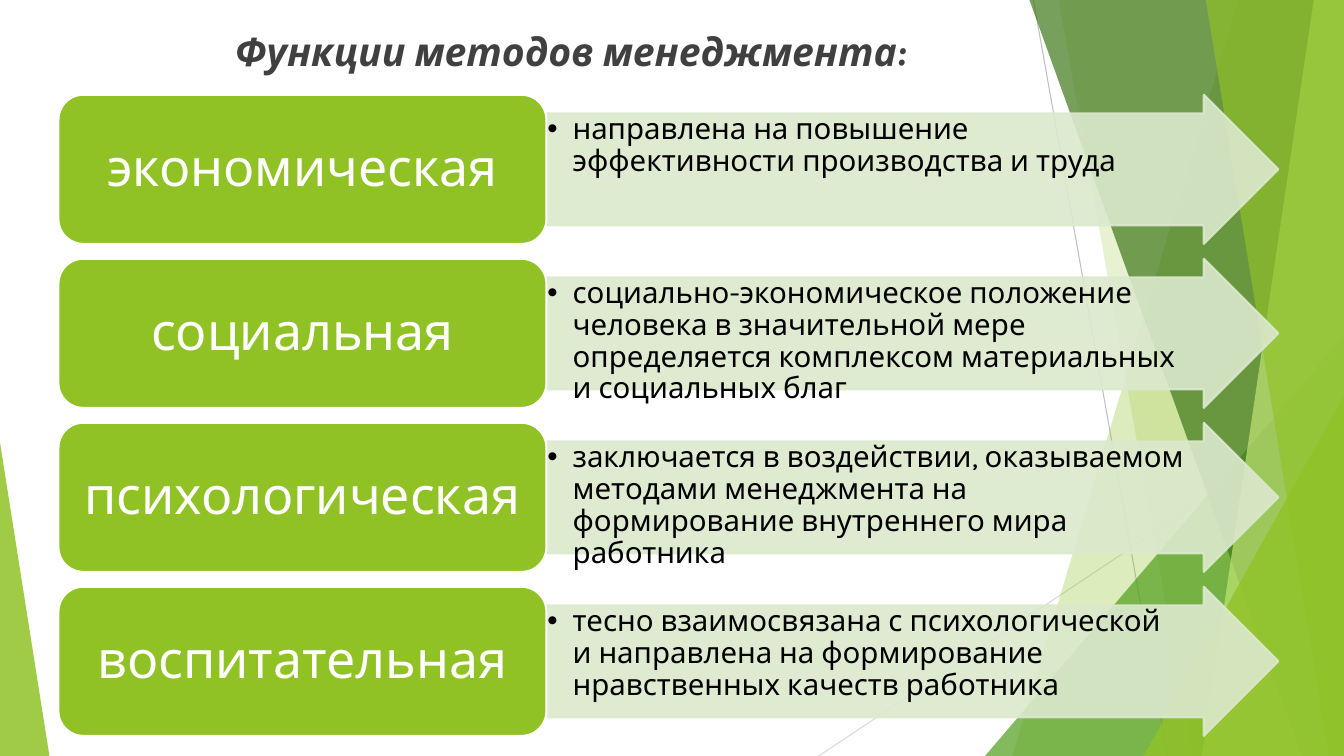
from lxml import etree
from pptx import Presentation
from pptx.dml.color import RGBColor
from pptx.enum.shapes import MSO_CONNECTOR, MSO_SHAPE
from pptx.enum.text import MSO_ANCHOR, PP_ALIGN
from pptx.oxml.ns import qn
from pptx.util import Inches, Pt

STRAIGHT = MSO_CONNECTOR.STRAIGHT
TRIANGLE = MSO_SHAPE.ISOSCELES_TRIANGLE
ARROW, ROUNDED = MSO_SHAPE.RIGHT_ARROW, MSO_SHAPE.ROUNDED_RECTANGLE
TOP, MIDDLE = MSO_ANCHOR.TOP, MSO_ANCHOR.MIDDLE
LEFT, CENTER = PP_ALIGN.LEFT, PP_ALIGN.CENTER

TITLE = "Функции методов менеджмента:"
FUNCTIONS = [
    ("экономическая", "направлена на повышение эффективности производства и труда"),
    ("социальная", "социально-экономическое положение человека в значительной мере "
                   "определяется комплексом материальных и социальных благ"),
    ("психологическая", "заключается в воздействии, оказываемом методами менеджмента "
                        "на формирование внутреннего мира работника"),
    ("воспитательная", "тесно взаимосвязана с психологической и направлена "
                       "на формирование нравственных качеств работника"),
]

THEME = {
    "font": "Karla", "title_size": 28, "label_size": 37, "detail_size": 21,
    "title": "404040", "label": "FFFFFF", "detail": "000000",
    "green": "90C226", "leaf": "54A021", "forest": "3F7819", "lime": "C0E474",
    "arrow": "DBE9CD", "outline": "FFFFFF", "ray": "BFBFBF", "pale_ray": "D9D9D9",
}

WIDTH, HEIGHT = 13.33, 7.5
RAYS = [((10.25, 0), (11.58, HEIGHT), "ray"), ((WIDTH, 4.03), (8.12, HEIGHT), "pale_ray")]
# Bands reach the right edge: (top x, bottom x, colour, opacity %)
# Triangles stand on the bottom edge: (left, top, width, apex, colour, opacity %)
BACKDROP = [
    ("band", (12.28, 10.04, "green", 30)),
    ("band", (10.5, 11.83, "green", 20)),
    ("triangle", (9.77, 3.33, 3.56, 1, "leaf", 72)),
    ("band", (10.21, 12.91, "forest", 70)),
    ("band", (13.03, 11.92, "lime", 70)),
    ("band", (11.96, 13.18, "green", 65)),
    ("triangle", (11.34, 3.93, 1.99, 1, "green", 80)),
    ("triangle", (0, 4.39, 0.49, 0, "green", 85)),
]

ROW_TOP, ROW_HEIGHT, ROW_STEP = 0.94, 1.48, 1.627
LABEL_LEFT, LABEL_WIDTH, ARROW_WIDTH = 0.58, 4.84, 7.26


def color(name):
    return RGBColor.from_string(THEME[name])


def paint(fill_format, name, opacity=100):
    fill_format.solid()
    fill_format.fore_color.rgb = color(name)
    if opacity < 100:
        for value in fill_format._xPr.iter(qn("a:srgbClr")):
            etree.SubElement(value, qn("a:alpha"), val=str(opacity * 1000))


def style(shape, fill, opacity=100, line=None):
    shape.shadow.inherit = False
    if line:
        shape.line.width = Pt(1.5)
        paint(shape.line.fill, line, opacity)
    else:
        shape.line.fill.background()
    paint(shape.fill, fill, opacity)


def add_shape(page, kind, left, top, width, height):
    return page.shapes.add_shape(kind, *map(Inches, (left, top, width, height)))


def add_ray(page, start, end, name):
    ray = page.shapes.add_connector(STRAIGHT, *map(Inches, (*start, *end)))
    ray.line.width = Pt(0.75)
    ray.line.color.rgb = color(name)
    etree.SubElement(ray._element.spPr, qn("a:effectLst"))


def add_band(page, top_x, bottom_x, name, opacity):
    outline = page.shapes.build_freeform(Inches(top_x), 0)
    corners = [(WIDTH, 0), (WIDTH, HEIGHT), (bottom_x, HEIGHT)]
    outline.add_line_segments([(Inches(x), Inches(y)) for x, y in corners], close=True)
    style(outline.convert_to_shape(), name, opacity)


def add_triangle(page, left, top, width, apex, name, opacity):
    triangle = add_shape(page, TRIANGLE, left, top, width, HEIGHT - top)
    triangle.adjustments[0] = apex
    style(triangle, name, opacity)


def write(shape, text, role, align, anchor, insets):
    """Fill a shape with one paragraph; insets run left, top, right, bottom."""
    frame = shape.text_frame
    frame.word_wrap = True
    frame.vertical_anchor = anchor
    (frame.margin_left, frame.margin_top,
     frame.margin_right, frame.margin_bottom) = map(Inches, insets)
    para = frame.paragraphs[0]
    para.alignment = align
    span = para.add_run()
    span.text = text
    span.font.name = THEME["font"]
    span.font.size = Pt(THEME[role + "_size"])
    span.font.color.rgb = color(role)
    return para, span


def add_bullet(para, indent):
    properties = para._p.get_or_add_pPr()
    properties.set("marL", str(Inches(indent)))
    properties.set("indent", str(-Inches(indent)))
    etree.SubElement(properties, qn("a:buFont"), typeface="Arial")
    etree.SubElement(properties, qn("a:buChar"), char="•")


def add_function(page, top, label, detail):
    arrow = add_shape(page, ARROW, LABEL_LEFT + LABEL_WIDTH, top, ARROW_WIDTH, ROW_HEIGHT)
    arrow.adjustments[0], arrow.adjustments[1] = 0.75, 0.5
    style(arrow, "arrow", 90, line="arrow")
    para, _ = write(arrow, detail, "detail", LEFT, TOP, (0.01, 0.01, 0.37, 0.01))
    para.line_spacing = 0.9
    add_bullet(para, 0.25)

    box = add_shape(page, ROUNDED, LABEL_LEFT, top, LABEL_WIDTH, ROW_HEIGHT)
    style(box, "green", line="outline")
    para, _ = write(box, label, "label", CENTER, MIDDLE, (0.15, 0.08, 0.15, 0.08))
    para.line_spacing = 0.9


def main():
    deck = Presentation()
    deck.slide_width, deck.slide_height = Inches(WIDTH), Inches(HEIGHT)
    page = deck.slides.add_slide(deck.slide_layouts[6])

    for ray in RAYS:
        add_ray(page, *ray)
    painters = {"band": add_band, "triangle": add_triangle}
    for kind, settings in BACKDROP:
        painters[kind](page, *settings)

    heading = page.shapes.add_textbox(*map(Inches, (0.96, 0.22, 9.4, 0.55)))
    _, span = write(heading, TITLE, "title", CENTER, TOP, (0.1, 0.05, 0.1, 0.05))
    span.font.bold = span.font.italic = True

    for row, (label, detail) in enumerate(FUNCTIONS):
        add_function(page, ROW_TOP + row * ROW_STEP, label, detail)

    deck.save("out.pptx")


if __name__ == "__main__":
    main()
